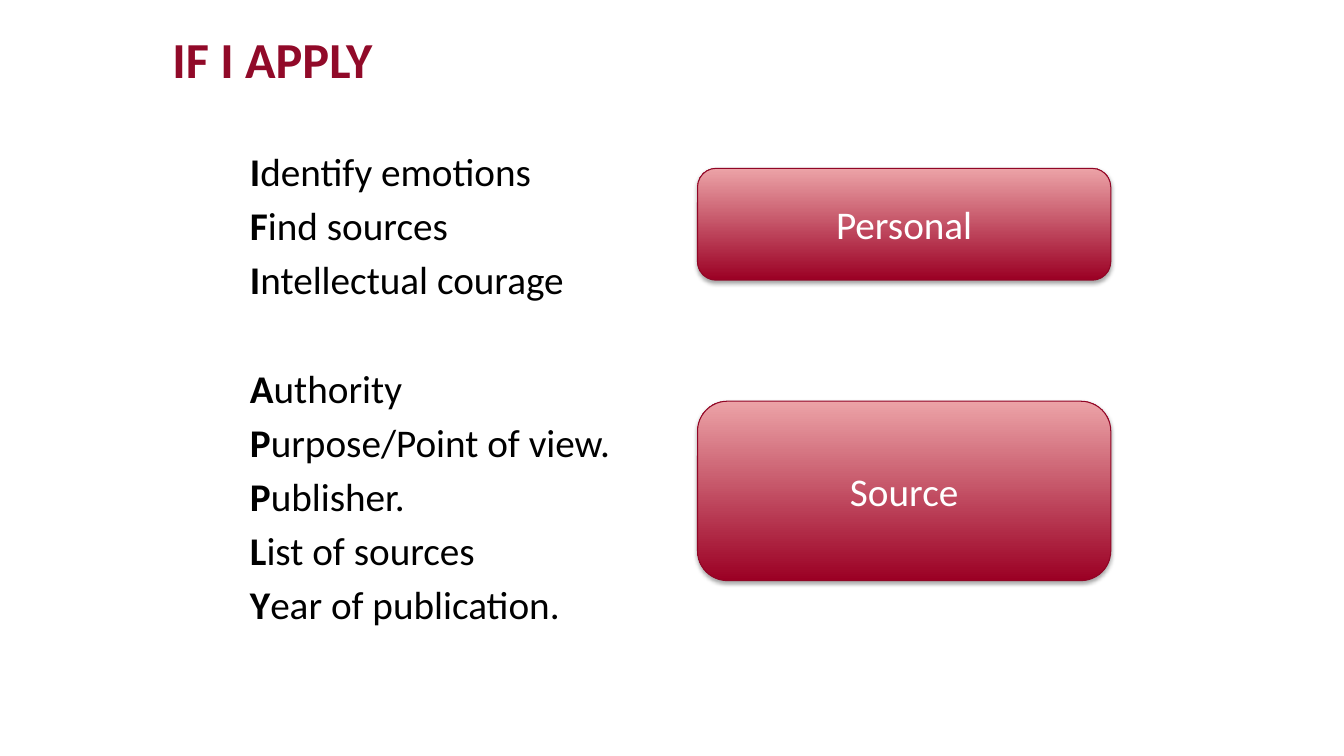
from lxml import etree
from pptx import Presentation
from pptx.dml.color import RGBColor
from pptx.enum.shapes import MSO_SHAPE
from pptx.enum.text import MSO_ANCHOR, PP_ALIGN
from pptx.oxml.ns import qn
from pptx.util import Inches, Pt

ROUNDED = MSO_SHAPE.ROUNDED_RECTANGLE
MIDDLE, TOP = MSO_ANCHOR.MIDDLE, MSO_ANCHOR.TOP
LEFT, CENTER = PP_ALIGN.LEFT, PP_ALIGN.CENTER
COLORS = {"title": "910A29", "text": "000000", "label": "FFFFFF", "dark": "9B0024",
          "light": "ECA3A7", "outline": "910626", "shadow": "000000"}
BODY_SIZE = 28
LINE_GAP = 5
GROUP_GAP = 44

presentation = Presentation()
presentation.slide_width = Inches(13.33)
presentation.slide_height = Inches(7.5)
slide = presentation.slides.add_slide(presentation.slide_layouts[6])
COLUMN = presentation.slide_width / 100
ROW = presentation.slide_height / 100


def place(left, top, width, height):
    return [round(length) for length in (left * COLUMN, top * ROW, width * COLUMN, height * ROW)]


def write_text(paragraph, text, size=BODY_SIZE, color="text", bold=False, align=LEFT):
    paragraph.alignment = align
    run = paragraph.add_run()
    run.text = text
    run.font.name = "Calibri"
    run.font.size = Pt(size)
    run.font.bold = bold
    run.font.color.rgb = RGBColor.from_string(COLORS[color])


title = slide.shapes.add_textbox(*place(12.83, 2.27, 67, 13.73)).text_frame
steps = slide.shapes.add_textbox(*place(18.6, 19.47, 76.4, 66.67)).text_frame
for frame, anchor, insets in ((title, MIDDLE, (0, 0.05, 0.1, 0)), (steps, TOP, (0, 0, 0, 0))):
    frame.word_wrap = True
    frame.vertical_anchor = anchor
    (frame.margin_left, frame.margin_top,
     frame.margin_right, frame.margin_bottom) = map(Inches, insets)

title.paragraphs[0].line_spacing = Pt(24)
write_text(title.paragraphs[0], "IF I APPLY", size=36, color="title", bold=True)

groups = (
    ("Identify emotions", "Find sources", "Intellectual courage"),
    ("Authority", "Purpose/Point of view.", "Publisher.", "List of sources",
     "Year of publication."),
)
paragraph = steps.paragraphs[0]
for group in groups:
    for step in group:
        if paragraph.runs:
            paragraph = steps.add_paragraph()
            paragraph.space_before = Pt(GROUP_GAP if step == group[0] else LINE_GAP)
        write_text(paragraph, step[0], bold=True)
        write_text(paragraph, step[1:])

for label, top, height in (("Personal", 22.27, 14.8), ("Source", 53.07, 23.73)):
    shape = slide.shapes.add_shape(ROUNDED, *place(51.9, top, 30.75, height))
    shape.fill.gradient()
    shape.fill.gradient_angle = 90
    for stop, position, color in zip(shape.fill.gradient_stops, (0, 1), ("dark", "light")):
        stop.position = position
        stop.color.rgb = RGBColor.from_string(COLORS[color])
    shape.line.color.rgb = RGBColor.from_string(COLORS["outline"])
    shape.line.width = Pt(0.75)
    shape.shadow.inherit = False
    effects = shape._element.spPr.find(qn("a:effectLst"))
    shadow = etree.SubElement(effects, qn("a:outerShdw"), blurRad=str(Pt(3.1)),
                              dist=str(Pt(1.8)), dir="5400000", rotWithShape="0")
    shadow_color = etree.SubElement(shadow, qn("a:srgbClr"), val=COLORS["shadow"])
    etree.SubElement(shadow_color, qn("a:alpha"), val="35000")
    shape.text_frame.vertical_anchor = MIDDLE
    write_text(shape.text_frame.paragraphs[0], label, color="label", align=CENTER)

presentation.save("out.pptx")
